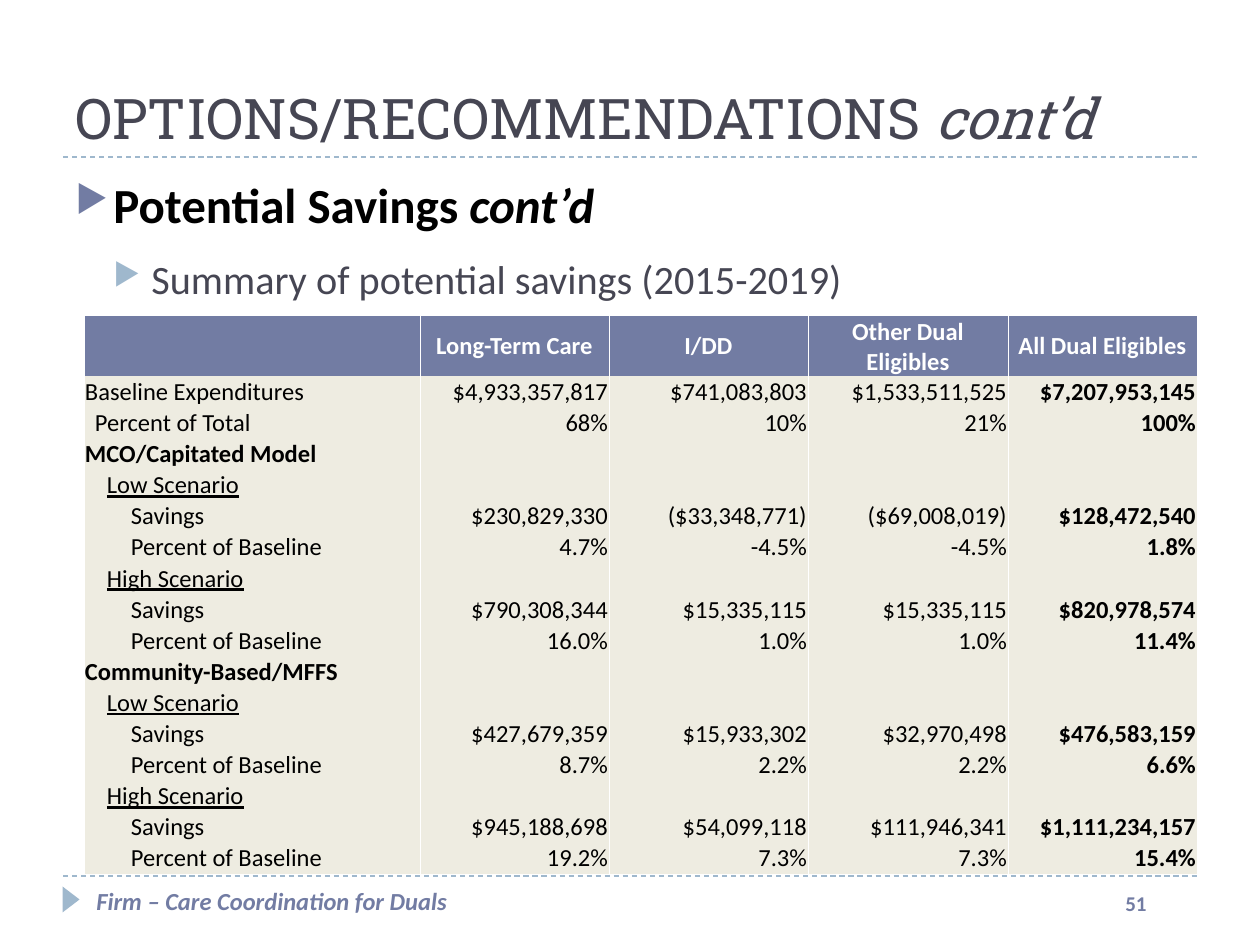
from lxml import etree
from pptx import Presentation
from pptx import util as u
from pptx.dml.color import RGBColor
from pptx.enum import dml, shapes, text
from pptx.oxml import ns

SCALE = 914400 / 126
SLATE, SKY, INK, CREAM = "727CA3", "9FB8CD", "464653", "EEECE1"
BLACK, WHITE = "000000", "FFFFFF"
LEFT, RIGHT = text.PP_ALIGN.LEFT, text.PP_ALIGN.RIGHT
MID = text.PP_ALIGN.CENTER

HEAD = ["", "Long-Term Care", "I/DD", "Other Dual Eligibles",
        "All Dual Eligibles"]
COLS = [336, 189, 199, 200, 189]
# Label, style, values
ROWS = [
    ("Baseline Expenditures", "plain",
     "$4,933,357,817 $741,083,803 $1,533,511,525 $7,207,953,145"),
    ("Percent of Total", "share", "68% 10% 21% 100%"),
    ("MCO/Capitated Model", "model", ""),
    ("Low Scenario", "case", ""),
    ("Savings", "item",
     "$230,829,330 ($33,348,771) ($69,008,019) $128,472,540"),
    ("Percent of Baseline", "item", "4.7% -4.5% -4.5% 1.8%"),
    ("High Scenario", "case", ""),
    ("Savings", "item", "$790,308,344 $15,335,115 $15,335,115 $820,978,574"),
    ("Percent of Baseline", "item", "16.0% 1.0% 1.0% 11.4%"),
    ("Community-Based/MFFS", "model", ""),
    ("Low Scenario", "case", ""),
    ("Savings", "item", "$427,679,359 $15,933,302 $32,970,498 $476,583,159"),
    ("Percent of Baseline", "item", "8.7% 2.2% 2.2% 6.6%"),
    ("High Scenario", "case", ""),
    ("Savings", "item",
     "$945,188,698 $54,099,118 $111,946,341 $1,111,234,157"),
    ("Percent of Baseline", "item", "19.2% 7.3% 7.3% 15.4%"),
]
INSET = {"plain": 1, "share": 11, "model": 1, "case": 23, "item": 47}


def px(n):
    return u.Emu(round(n * SCALE))


def rgb(code):
    return RGBColor.from_string(code)


def add(node, tag, **attrs):
    return etree.SubElement(node, ns.qn(tag), attrs)


def style(font, size, color, bold=False, italic=None, face="Calibri"):
    font.name, font.size = face, u.Pt(size)
    font.bold, font.italic = bold, italic
    font.color.rgb = rgb(color)


def textbox(slide, x, y, w, h):
    frame = slide.shapes.add_textbox(px(x), px(y), px(w), px(h)).text_frame
    frame.word_wrap = True
    return frame


def rule(slide, x, y, w):
    line = slide.shapes.add_connector(
        shapes.MSO_CONNECTOR.STRAIGHT, px(x), px(y), px(x + w), px(y))
    line.line.color.rgb = rgb(SKY)
    line.line.width = u.Pt(0.75)
    line.line.dash_style = dml.MSO_LINE.DASH
    add(line._element.spPr, "a:effectLst")


def bullet(para, color, left):
    props = para._p.get_or_add_pPr()
    props.set("marL", str(px(left)))
    props.set("indent", str(-px(38)))
    tint = etree.Element(ns.qn("a:buClr"))
    add(tint, "a:srgbClr", val=color)
    size = etree.Element(ns.qn("a:buSzPct"), val="76000")
    mark = etree.Element(ns.qn("a:buChar"), char="▶")
    for i, node in enumerate((tint, size, mark)):
        # Bullets follow the spacing and precede the font defaults
        props.insert(i + 1, node)


def title(slide, x, y, w, h):
    frame = textbox(slide, x, y, w, h)
    frame.vertical_anchor = text.MSO_ANCHOR.BOTTOM
    para = frame.paragraphs[0]
    style(para.font, 32, INK, face="Roboto Slab")
    para.add_run().text = "OPTIONS/RECOMMENDATIONS "
    tail = para.add_run()
    tail.text, tail.font.italic = "cont’d", True
    rule(slide, x, y + h, w)


def body(slide, x, y, w, h):
    frame = textbox(slide, x, y, w, h)
    top, sub = frame.paragraphs[0], frame.add_paragraph()
    style(top.font, 28, BLACK, bold=True)
    top.add_run().text = "Potential Savings"
    tail = top.add_run()
    tail.text, tail.font.italic = " cont’d", True
    style(sub.font, 23, INK)
    sub.text, sub.level = "Summary of potential savings (2015-2019)", 1
    for para, color, left in ((top, SLATE, 38), (sub, SKY, 76)):
        para.space_before = u.Pt(12)
        bullet(para, color, left)


def edge(cell):
    # White between columns, nothing between rows
    props = cell._tc.get_or_add_tcPr()
    for i, side in enumerate("LRTB"):
        line = etree.Element(ns.qn("a:ln" + side), w=str(u.Pt(0.5)))
        if side in "LR":
            add(add(line, "a:solidFill"), "a:srgbClr", val=WHITE)
        else:
            add(line, "a:noFill")
        props.insert(i, line)


def fill(cell, words, align, back, color, bold=False, inset=1):
    cell.fill.solid()
    cell.fill.fore_color.rgb = rgb(back)
    edge(cell)
    cell.margin_left, cell.margin_right = px(inset), px(1)
    cell.margin_top, cell.margin_bottom = px(1), 0
    cell.vertical_anchor = text.MSO_ANCHOR.MIDDLE
    para = cell.text_frame.paragraphs[0]
    para.text, para.alignment = words, align
    style(para.font, 14, color, bold)
    if not words:
        # An empty cell takes its line height from the end mark
        add(para._p, "a:endParaRPr", sz="1400")
    return para


def savings(slide, x, y, w, h):
    top = 60
    grid = slide.shapes.add_table(len(ROWS) + 1, len(COLS), px(x), px(y),
                                  px(w), px(h)).table
    grid.first_row = grid.horz_banding = False
    for col, wide in zip(grid.columns, COLS):
        col.width = px(wide)
    for row in grid.rows:
        row.height = px((h - top) / len(ROWS))
    grid.rows[0].height = px(top)
    for c, words in enumerate(HEAD):
        fill(grid.cell(0, c), words, MID, SLATE, WHITE, bold=True)
    for r, (label, kind, values) in enumerate(ROWS, 1):
        para = fill(grid.cell(r, 0), label, LEFT, CREAM, BLACK,
                    kind == "model", INSET[kind])
        if kind == "case":
            para.font.underline = True
        cells = values.split() or [""] * 4
        for c, words in enumerate(cells, 1):
            fill(grid.cell(r, c), words, RIGHT, CREAM, BLACK, c == 4)


def footer(slide, x, y, w):
    rule(slide, x, y, w)
    mark = slide.shapes.add_shape(shapes.MSO_SHAPE.ISOSCELES_TRIANGLE,
                                  px(x - 5), px(y + 15), px(26), px(17))
    mark.rotation = 90
    mark.shadow.inherit = False
    mark.fill.solid()
    mark.fill.fore_color.rgb = rgb(SKY)
    mark.line.fill.background()
    name = textbox(slide, x + 21, y + 4, 567, 65).paragraphs[0]
    name.text = "Firm – Care Coordination for Duals"
    style(name.font, 14, SLATE, bold=True, italic=True)
    page = textbox(slide, x + 1050, y + 8, 73, 50).paragraphs[0]
    page.text = "51"
    style(page.font, 12, SLATE, bold=True)


def main():
    deck = Presentation()
    deck.slide_width, deck.slide_height = px(1260), px(945)
    slide = deck.slides.add_slide(deck.slide_layouts[6])
    footer(slide, 63, 876, 1134)
    title(slide, 63, 21, 1134, 136)
    body(slide, 63, 168, 1134, 703)
    savings(slide, 84, 316, 1113, 558)
    deck.save("out.pptx")


if __name__ == "__main__":
    main()
